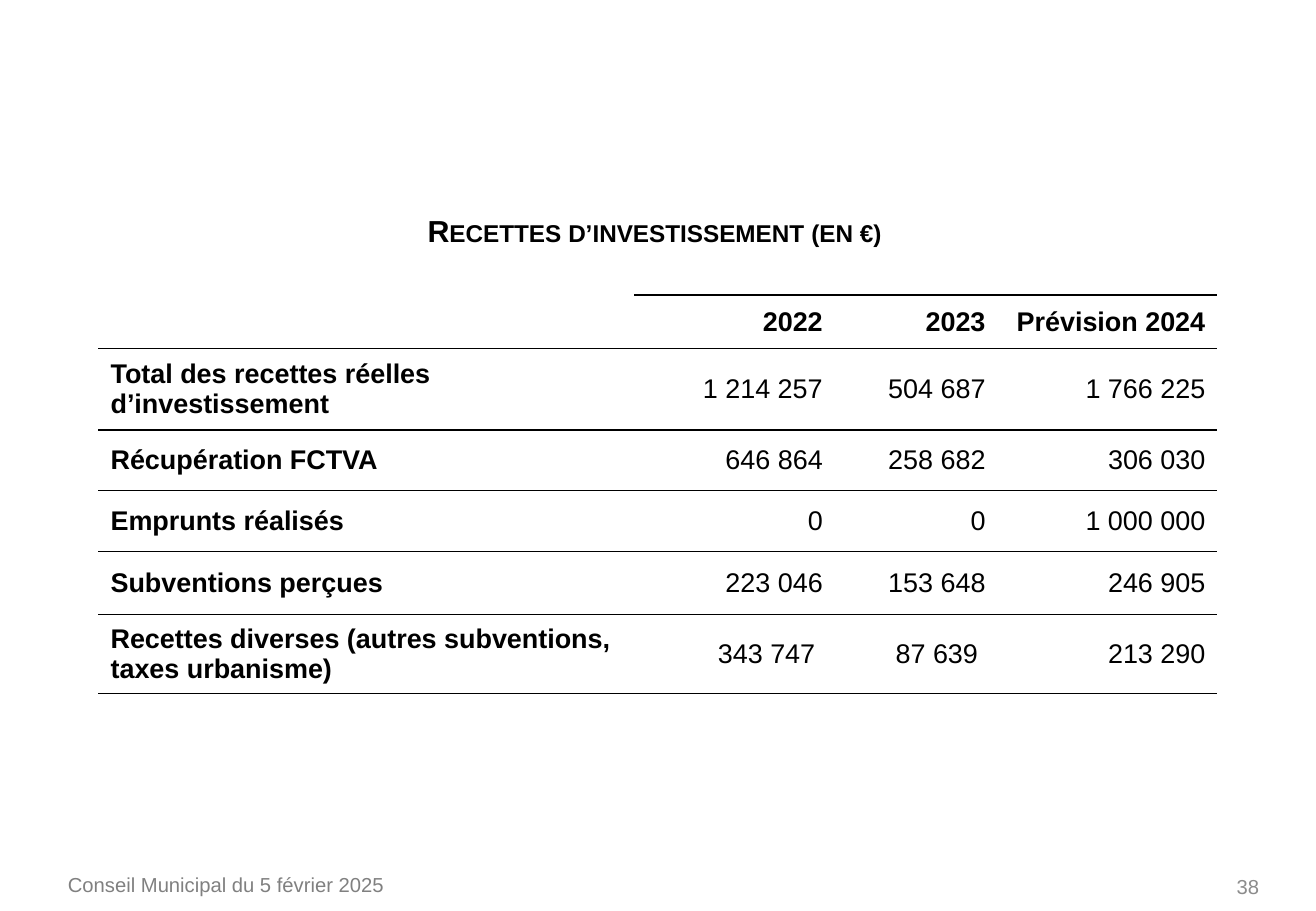
import dataclasses
import typing

import pptx
import pptx.dml.color
import pptx.enum.text
import pptx.oxml
import pptx.oxml.ns
import pptx.util

SLIDE_WIDTH = pptx.util.Inches(10.83)
SLIDE_HEIGHT = pptx.util.Inches(7.5)
BLACK = pptx.dml.color.RGBColor(0x00, 0x00, 0x00)
FOOTER_GREY = pptx.dml.color.RGBColor(0x80, 0x80, 0x80)
NUMBER_GREY = pptx.dml.color.RGBColor(0x8C, 0x8C, 0x8C)
PLAIN_TABLE_STYLE = "{2D5ABB26-0587-4C30-8999-92F81FD0307C}"
LEFT = pptx.enum.text.PP_ALIGN.LEFT
CENTER = pptx.enum.text.PP_ALIGN.CENTER
RIGHT = pptx.enum.text.PP_ALIGN.RIGHT
TOP = pptx.enum.text.MSO_ANCHOR.TOP
MIDDLE = pptx.enum.text.MSO_ANCHOR.MIDDLE


@dataclasses.dataclass(frozen=True)
class Frame:
    """Position and size in percent of the slide."""

    left: float
    top: float
    width: float
    height: float


@dataclasses.dataclass(frozen=True)
class Label:
    text: str
    frame: Frame
    style: dict[str, typing.Any]
    anchor: pptx.enum.text.MSO_ANCHOR = TOP


@dataclasses.dataclass(frozen=True)
class BudgetRow:
    height: float
    texts: tuple[str, str, str, str]


LABELS = (
    Label("Recettes d’investissement (en €) ", Frame(23.82, 22.67, 52.35, 9.47),
          dict(size=18, bold=True, align=CENTER, small_caps=True)),
    Label("Conseil Municipal du 5 février 2025", Frame(4.25, 95.07, 41.46, 5.33),
          dict(size=12, color=FOOTER_GREY)),
    Label("38", Frame(74.05, 94.67, 22.53, 5.33),
          dict(size=12, color=NUMBER_GREY, align=RIGHT), MIDDLE),
)
TABLE_LEFT, TABLE_TOP = 7.48, 32.4
COLUMN_WIDTHS = (40.72, 15.24, 12.37, 16.71)
BUDGET = (
    BudgetRow(5.87, ("", "2022", "2023", "Prévision 2024")),
    BudgetRow(8.93, ("Total des recettes réelles d’investissement",
                     "1 214 257", "504 687", "1 766 225")),
    BudgetRow(6.67, ("Récupération FCTVA", "646 864", "258 682", "306 030")),
    BudgetRow(6.67, ("Emprunts réalisés", "0", "0", "1 000 000")),
    BudgetRow(6.93, ("Subventions perçues", "223 046", "153 648", "246 905")),
    BudgetRow(8.67, ("Recettes diverses (autres subventions, taxes urbanisme)",
                     "343 747 ", "87 639 ", "213 290")),
)


def across(percent: float) -> int:
    return round(SLIDE_WIDTH * percent / 100)


def down(percent: float) -> int:
    return round(SLIDE_HEIGHT * percent / 100)


def place(frame: Frame) -> tuple[int, int, int, int]:
    return across(frame.left), down(frame.top), across(frame.width), down(frame.height)


def write_text(text_frame, text: str, *, size: float, bold: bool = False,
               color: pptx.dml.color.RGBColor = BLACK, align=LEFT,
               small_caps: bool = False) -> None:
    para = text_frame.paragraphs[0]
    para.alignment = align
    span = para.add_run()
    span.text = text
    span.font.name = "Arial"
    span.font.size = pptx.util.Pt(size)
    span.font.bold = bold
    span.font.color.rgb = color
    if small_caps:
        span._r.get_or_add_rPr().set("cap", "small")


def add_label(page, label: Label) -> None:
    box = page.shapes.add_textbox(*place(label.frame))
    box.text_frame.word_wrap = True
    box.text_frame.vertical_anchor = label.anchor
    write_text(box.text_frame, label.text, **label.style)


def draw_borders(cell, sides: tuple[str, ...]) -> None:
    properties = cell._tc.get_or_add_tcPr()
    for position, side in enumerate(sides):
        border = pptx.oxml.parse_xml(
            f'<a:{side} {pptx.oxml.ns.nsdecls("a")} w="{pptx.util.Pt(1)}">'
            f'<a:solidFill><a:srgbClr val="{BLACK}"/></a:solidFill></a:{side}>')
        properties.insert(position, border)


def add_budget(page) -> None:
    frame = Frame(TABLE_LEFT, TABLE_TOP, sum(COLUMN_WIDTHS),
                  sum(row.height for row in BUDGET))
    table = page.shapes.add_table(len(BUDGET), len(COLUMN_WIDTHS), *place(frame)).table
    table.first_row = False
    table.horz_banding = False
    table._tbl.tblPr.find(pptx.oxml.ns.qn("a:tableStyleId")).text = PLAIN_TABLE_STYLE
    for column, width in zip(table.columns, COLUMN_WIDTHS):
        column.width = across(width)
    for row_index, row in enumerate(BUDGET):
        table.rows[row_index].height = down(row.height)
        for column_index, text in enumerate(row.texts):
            cell = table.cell(row_index, column_index)
            cell.fill.background()
            cell.vertical_anchor = MIDDLE
            draw_borders(cell, ("lnT", "lnB") if row_index or column_index else ("lnB",))
            if text:
                write_text(cell.text_frame, text, size=16,
                           bold=row_index == 0 or column_index == 0,
                           align=RIGHT if column_index else LEFT)


def main() -> None:
    deck = pptx.Presentation()
    deck.slide_width = SLIDE_WIDTH
    deck.slide_height = SLIDE_HEIGHT
    page = deck.slides.add_slide(deck.slide_layouts[6])
    add_budget(page)
    for label in LABELS:
        add_label(page, label)
    deck.save("out.pptx")


if __name__ == "__main__":
    main()
